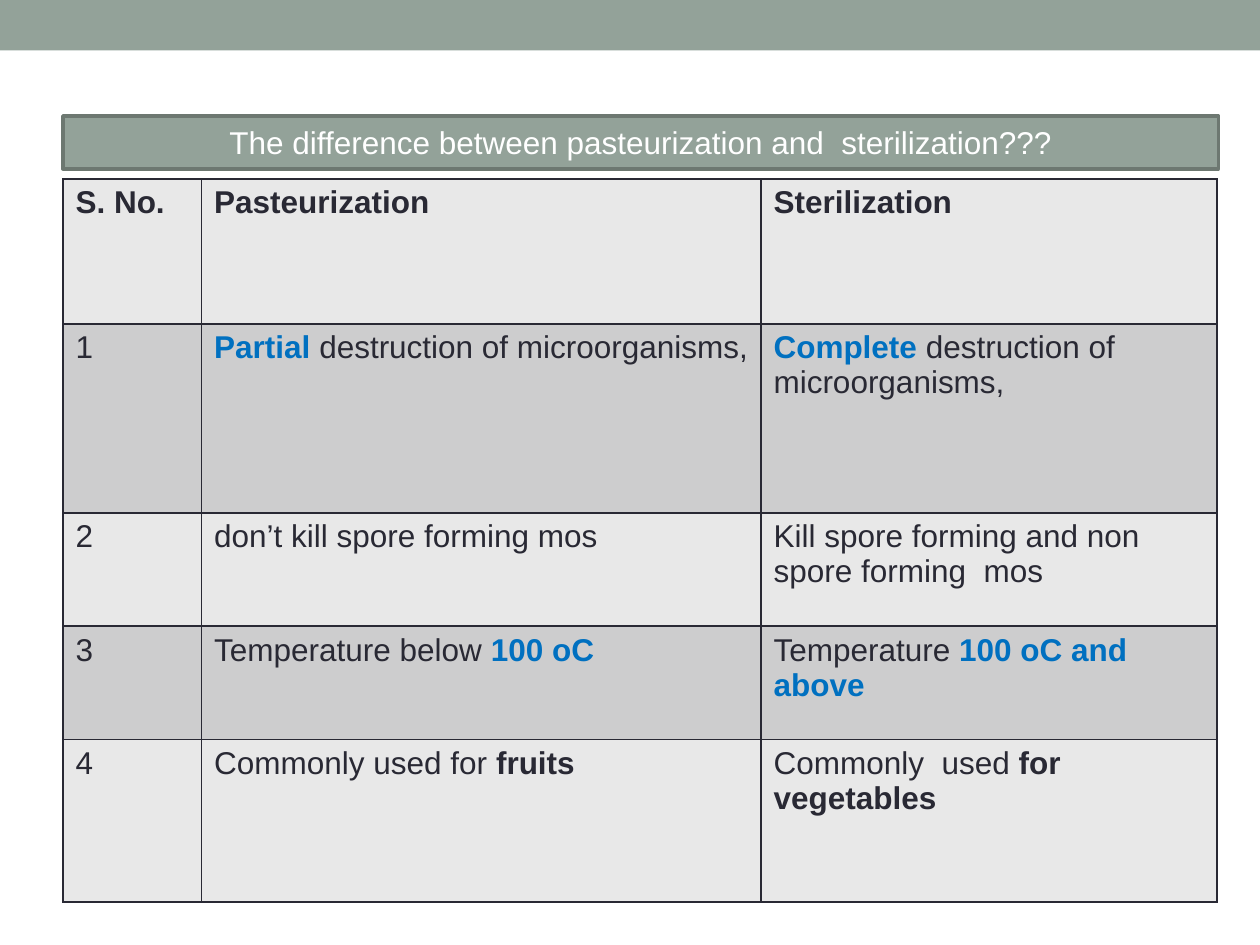
from lxml import etree
from pptx import Presentation
from pptx import util as u
from pptx.dml.color import RGBColor
from pptx.enum import shapes, text
from pptx.oxml import ns

SLIDE_W, SLIDE_H = 10, 7.5
SAGE, SAGE_DARK, INK, BLUE, WHITE = "93A299", "6D7871", "292934", "0070C0", "FFFFFF"
BANDS = ("E8E8E8", "CDCDCE")
STYLES = {
    "plain": {"bold": False, "color": INK},
    "strong": {"bold": True, "color": INK},
    "key": {"bold": True, "color": BLUE},
    "heading": {"bold": False, "color": WHITE},
}

QUESTION = "The difference between pasteurization and  sterilization???"
COMPARISON = [
    [[("S. No.", "strong")], [("Pasteurization", "strong")], [("Sterilization", "strong")]],
    [[("1", "plain")],
     [("Partial ", "key"), ("destruction of microorganisms,", "plain")],
     [("Complete", "key"), (" destruction of microorganisms,", "plain")]],
    [[("2", "plain")],
     [("don’t kill spore forming mos", "plain")],
     [("Kill spore forming and non spore forming  mos", "plain")]],
    [[("3", "plain")],
     [("Temperature below ", "plain"), ("100 oC", "key")],
     [("Temperature ", "plain"), ("100 oC and above", "key")]],
    [[("4", "plain")],
     [("Commonly used for ", "plain"), ("fruits", "strong")],
     [("Commonly  used ", "plain"), ("for vegetables", "strong")]],
]
COLUMNS = (1.1, 4.44, 3.62)
ROWS = (1.15, 1.5, 0.9, 0.9, 1.29)
LEFT, TABLE_TOP = 0.5, 1.42
QUESTION_BOX = (LEFT, 0.92, 9.17, 0.42)


def rgb(value):
    return RGBColor.from_string(value)


def fill(target, color):
    target.fill.solid()
    target.fill.fore_color.rgb = rgb(color)


def write(paragraph, runs):
    for words, style in runs:
        run = paragraph.add_run()
        run.text = words
        look = {"name": "Arial", "size": u.Pt(18), "bold": STYLES[style]["bold"]}
        for attribute, value in look.items():
            setattr(run.font, attribute, value)
        run.font.color.rgb = rgb(STYLES[style]["color"])


def outline(cell, color, points):
    properties = cell._tc.get_or_add_tcPr()
    for side in ("lnL", "lnR", "lnT", "lnB"):
        edge = etree.SubElement(properties, ns.qn(f"a:{side}"), w=str(u.Pt(points)))
        paint = etree.SubElement(edge, ns.qn("a:solidFill"))
        etree.SubElement(paint, ns.qn("a:srgbClr"), val=color)


def add_band(slide):
    band = slide.shapes.add_shape(
        shapes.MSO_SHAPE.RECTANGLE, 0, 0, u.Inches(SLIDE_W), u.Inches(0.4))
    band.shadow.inherit = False
    fill(band, SAGE)
    band.line.fill.background()


def add_question(slide):
    question = slide.shapes.title
    for side, inches in zip(("left", "top", "width", "height"), QUESTION_BOX):
        setattr(question, side, u.Inches(inches))
    fill(question, SAGE)
    question.line.color.rgb = rgb(SAGE_DARK)
    question.line.width = u.Pt(2.08)
    frame = question.text_frame
    layout = {"word_wrap": True, "auto_size": text.MSO_AUTO_SIZE.NONE,
              "vertical_anchor": text.MSO_ANCHOR.MIDDLE}
    for attribute, value in layout.items():
        setattr(frame, attribute, value)
    frame.paragraphs[0].alignment = text.PP_ALIGN.CENTER
    write(frame.paragraphs[0], [(QUESTION, "heading")])


def add_comparison(slide):
    table = slide.shapes.add_table(
        len(ROWS), len(COLUMNS), u.Inches(LEFT), u.Inches(TABLE_TOP),
        u.Inches(sum(COLUMNS)), u.Inches(sum(ROWS))).table
    for column, width in zip(table.columns, COLUMNS):
        column.width = u.Inches(width)
    for index, (row, height, entries) in enumerate(zip(table.rows, ROWS, COMPARISON)):
        row.height = u.Inches(height)
        for cell, runs in zip(row.cells, entries):
            outline(cell, INK, 1)
            fill(cell, BANDS[index % 2])
            write(cell.text_frame.paragraphs[0], runs)


def main():
    deck = Presentation()
    deck.slide_width, deck.slide_height = u.Inches(SLIDE_W), u.Inches(SLIDE_H)
    slide = deck.slides.add_slide(deck.slide_layouts[5])
    add_band(slide)
    add_comparison(slide)
    add_question(slide)
    deck.save("out.pptx")


if __name__ == "__main__":
    main()
